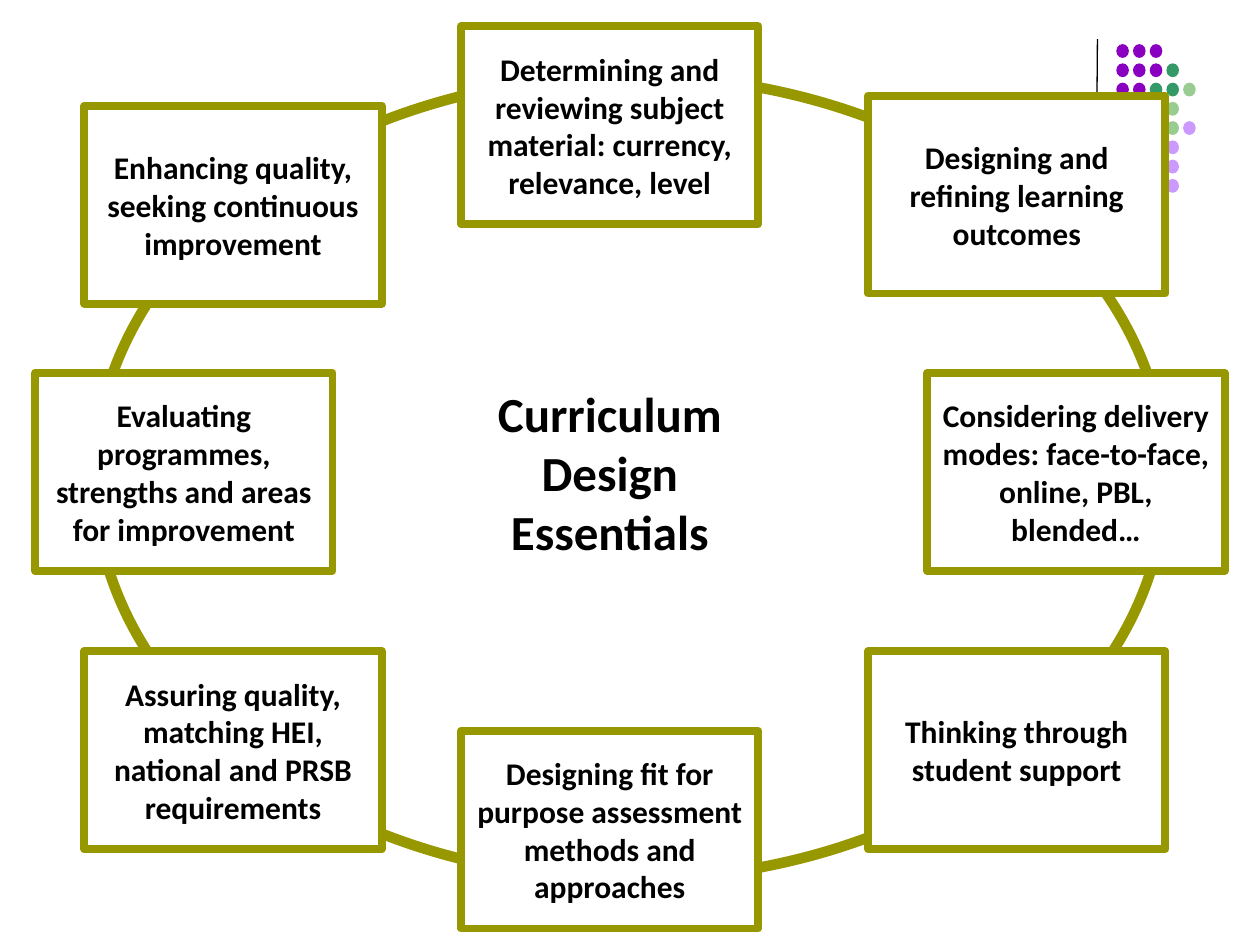
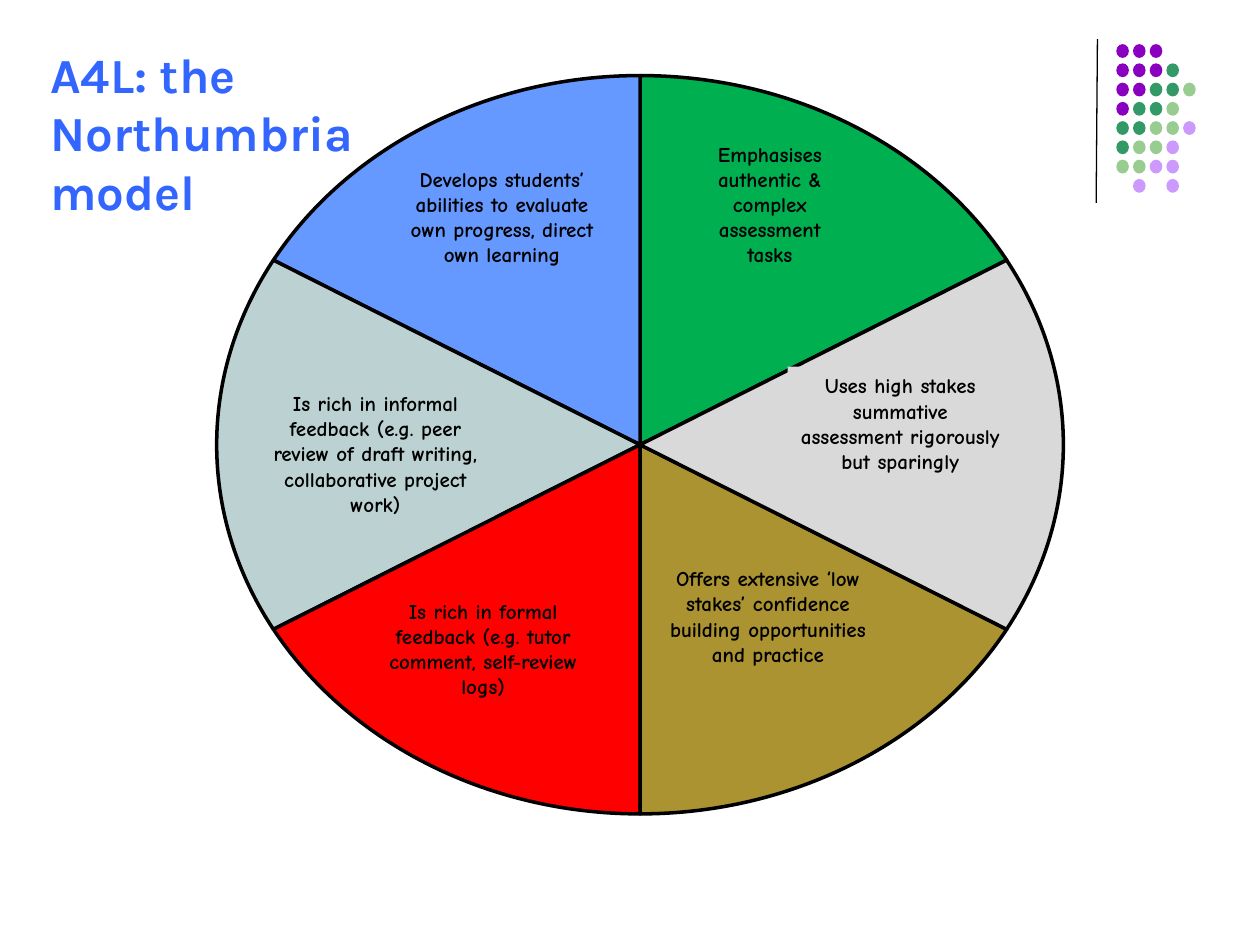
import math
from dataclasses import dataclass

from lxml import etree
from pptx import Presentation
from pptx.dml.color import RGBColor
from pptx.enum.shapes import MSO_CONNECTOR, MSO_SHAPE
from pptx.enum.text import MSO_ANCHOR, MSO_AUTO_SIZE, PP_ALIGN
from pptx.oxml.ns import qn
from pptx.util import Inches, Pt

RECTANGLE, OVAL = MSO_SHAPE.RECTANGLE, MSO_SHAPE.OVAL
STRAIGHT = MSO_CONNECTOR.STRAIGHT
TOP, MIDDLE = MSO_ANCHOR.TOP, MSO_ANCHOR.MIDDLE
LEFT, CENTER = PP_ALIGN.LEFT, PP_ALIGN.CENTER
NO_AUTOFIT = MSO_AUTO_SIZE.NONE
TITLE_ONLY, BLANK = 5, 6


@dataclass(frozen=True)
class Theme:
    white: str = "FFFFFF"
    black: str = "000000"
    olive: str = "979700"
    title: str = "3366FF"
    cycle_font: str = "Calibri"
    wheel_font: str = "Comic Neue"
    title_font: str = "Karla"
    heading_size: float = 28
    box_size: float = 18
    label_size: float = 12
    ring_line: float = 6
    box_line: float = 4.5
    wedge_line: float = 2
    rule_line: float = 0.75


@dataclass(frozen=True)
class Box:
    left: float
    top: float
    width: float
    height: float

    def inside(self, left, top, width, height):
        return Box(self.left + left, self.top + top, width, height)

    def lengths(self):
        return [Inches(value) for value in (self.left, self.top, self.width, self.height)]


@dataclass(frozen=True)
class WheelPart:
    start_angle: int
    color: str
    label_place: tuple
    text: str
    filled_label: bool = False
    side_margin: float = 0.1


THEME = Theme()
PAGE = Box(0, 0, 10, 7.5)
DOT_AREA = Box(8.7, 0.31, 0.79, 1.3)
WHEEL_AREA = Box(1.72, 0.6, 6.72, 5.86)
TITLE_AREA = Box(0.3, 0.3, 3.64, 1.51)

DOT_COLORS = {"P": "8A00C0", "G": "339966", "L": "99CC91", "V": "CC99FF"}
DOT_ROWS = ["PPP", "PPPG", "PPGGL", "PGGL", "GGLLV", "GLLV", "LLVV", " V V"]
CYCLE_DOT_ROWS = DOT_ROWS[:3] + [" " * 3 + row[3:] for row in DOT_ROWS[3:]]

BOX_WIDTH, BOX_HEIGHT = 2.36, 1.57
CENTER_TEXT = "Curriculum\nDesign\nEssentials"
CENTER_POSITION = (3.66, 2.96)
CYCLE_STEPS = [
    (0.28, 2.96, "Evaluating programmes, strengths and areas for improvement"),
    (7.36, 2.96, "Considering delivery modes: face-to-face, online, PBL, blended…"),
    (3.66, 0.21, "Determining and reviewing subject material: currency, relevance, level"),
    (3.66, 5.8, "Designing fit for purpose assessment methods and approaches"),
    (0.67, 0.84, "Enhancing quality, seeking continuous improvement"),
    (6.89, 0.76, "Designing and refining learning outcomes"),
    (0.67, 5.17, "Assuring quality, matching HEI, national and PRSB requirements"),
    (6.89, 5.17, "Thinking through student support"),
]

WHEEL_PARTS = [
    WheelPart(270, "00B050", (3.72, 0.47, 1.34, 1.11),
              "Emphasises authentic & complex assessment tasks", True),
    WheelPart(210, "6699FF", (1.38, 0.67, 1.77, 1.11),
              "Develops students’ abilities to evaluate own progress, direct own learning"),
    WheelPart(150, "BCD2D2", (0.32, 2.45, 1.88, 1.31),
              "Is rich in informal feedback (e.g. peer review of draft writing, "
              "collaborative project work)", True),
    WheelPart(90, "FF0000", (1.08, 4.1, 2.07, 0.91),
              "Is rich in formal feedback (e.g. tutor comment, self-review logs)",
              side_margin=0.25),
    WheelPart(30, "AA9330", (3.47, 3.84, 1.81, 1.11),
              "Offers extensive ‘low stakes’ confidence building opportunities and practice"),
    WheelPart(330, "D9D9D9", (4.53, 2.31, 1.79, 1.11),
              "Uses high stakes summative assessment rigorously but sparingly", True),
]
CURVE_ANGLE = 30
CURVES_PER_WEDGE = 2


def rgb(color):
    return RGBColor.from_string(color)


def paint(shape, fill, line=None, width=0):
    shape.shadow.inherit = False
    shape.fill.solid()
    shape.fill.fore_color.rgb = rgb(fill)
    if line:
        shape.line.color.rgb = rgb(line)
        shape.line.width = Pt(width)
    else:
        shape.line.fill.background()


def write(shape, text, font, size, color=THEME.black, alignment=CENTER, anchor=MIDDLE):
    frame = shape.text_frame
    frame.text = text
    frame.word_wrap = True
    frame.auto_size = NO_AUTOFIT
    frame.vertical_anchor = anchor
    for paragraph in frame.paragraphs:
        paragraph.alignment = alignment
        for run in paragraph.runs:
            run.font.name = font
            run.font.size = Pt(size)
            run.font.bold = True
            run.font.color.rgb = rgb(color)


def add_dot_pattern(slide, area, rows):
    rule = slide.shapes.add_connector(
        STRAIGHT, Inches(area.left + 0.01), Inches(area.top),
        Inches(area.left), Inches(area.top + area.height))
    rule.line.color.rgb = rgb(THEME.black)
    rule.line.width = Pt(THEME.rule_line)
    etree.SubElement(rule._element.spPr, qn("a:effectLst"))
    group = slide.shapes.add_group_shape()
    for row, codes in enumerate(rows):
        for column, code in enumerate(codes):
            if code in DOT_COLORS:
                dot_box = area.inside(0.16 + column * 0.53 / 4, 0.04 + row * 1.07 / 7, 0.1, 0.11)
                dot = group.shapes.add_shape(OVAL, *dot_box.lengths())
                paint(dot, DOT_COLORS[code])


def add_cycle_box(slide, area, text, line, size):
    shape = slide.shapes.add_shape(RECTANGLE, *area.lengths())
    paint(shape, THEME.white, line, THEME.box_line)
    write(shape, text, THEME.cycle_font, size)


def add_cycle(slide, area):
    ring = slide.shapes.add_shape(OVAL, *area.inside(0.75, 0.6, 8.5, 6.38).lengths())
    paint(ring, THEME.white, THEME.olive, THEME.ring_line)
    for left, top, text in CYCLE_STEPS:
        step_box = area.inside(left, top, BOX_WIDTH, BOX_HEIGHT)
        add_cycle_box(slide, step_box, text, THEME.olive, THEME.box_size)
    center_box = area.inside(*CENTER_POSITION, BOX_WIDTH, BOX_HEIGHT)
    add_cycle_box(slide, center_box, CENTER_TEXT, THEME.white, THEME.heading_size)


def arc_points(area, start_angle):
    handle = 4 / 3 * math.tan(math.radians(CURVE_ANGLE) / 4)

    def place(degrees, tangent):
        angle = math.radians(degrees)
        x = math.cos(angle) - tangent * math.sin(angle)
        y = math.sin(angle) + tangent * math.cos(angle)
        return (Inches(area.left + area.width / 2 * (1 + x)),
                Inches(area.top + area.height / 2 * (1 + y)))

    points = [place(start_angle, 0)]
    for curve in range(CURVES_PER_WEDGE):
        first = start_angle + curve * CURVE_ANGLE
        last = first + CURVE_ANGLE
        points += [place(first, handle), place(last, -handle), place(last, 0)]
    return points


def bend_arc(shape):
    segments = list(shape._element.iter(qn("a:lnTo")))[1:]
    for curve in range(CURVES_PER_WEDGE):
        trio = segments[curve * 3:curve * 3 + 3]
        bezier = etree.Element(qn("a:cubicBezTo"))
        trio[0].addprevious(bezier)
        for segment in trio:
            bezier.append(segment[0])
            segment.getparent().remove(segment)


def add_wedge(shapes, area, start_angle, color):
    center_x = Inches(area.left + area.width / 2)
    center_y = Inches(area.top + area.height / 2)
    builder = shapes.build_freeform(center_x, center_y)
    builder.add_line_segments(arc_points(area, start_angle), close=True)
    wedge = builder.convert_to_shape()
    bend_arc(wedge)
    paint(wedge, color, THEME.black, THEME.wedge_line)


def add_label(shapes, area, part):
    lengths = area.inside(*part.label_place).lengths()
    if part.filled_label:
        label = shapes.add_shape(RECTANGLE, *lengths)
        paint(label, part.color)
    else:
        label = shapes.add_textbox(*lengths)
    label.text_frame.margin_left = label.text_frame.margin_right = Inches(part.side_margin)
    write(label, part.text, THEME.wheel_font, THEME.label_size, anchor=TOP)


def add_wheel(slide, area):
    for part in WHEEL_PARTS:
        group = slide.shapes.add_group_shape()
        add_wedge(group.shapes, area, part.start_angle, part.color)
        add_label(group.shapes, area, part)


def set_title(slide, area, text):
    title = slide.shapes.title
    title.left, title.top, title.width, title.height = area.lengths()
    write(title, text, THEME.title_font, THEME.heading_size, THEME.title, LEFT, TOP)


def add_slide(presentation, layout, dot_rows):
    slide = presentation.slides.add_slide(presentation.slide_layouts[layout])
    add_dot_pattern(slide, DOT_AREA, dot_rows)
    return slide


def build_cycle_slide(presentation):
    slide = add_slide(presentation, BLANK, CYCLE_DOT_ROWS)
    add_cycle(slide, PAGE)


def build_wheel_slide(presentation):
    slide = add_slide(presentation, TITLE_ONLY, DOT_ROWS)
    set_title(slide, TITLE_AREA, "A4L: the Northumbria model")
    add_wheel(slide, WHEEL_AREA)


def main():
    presentation = Presentation()
    presentation.slide_width = Inches(PAGE.width)
    presentation.slide_height = Inches(PAGE.height)
    build_cycle_slide(presentation)
    build_wheel_slide(presentation)
    presentation.save("out.pptx")


if __name__ == "__main__":
    main()
